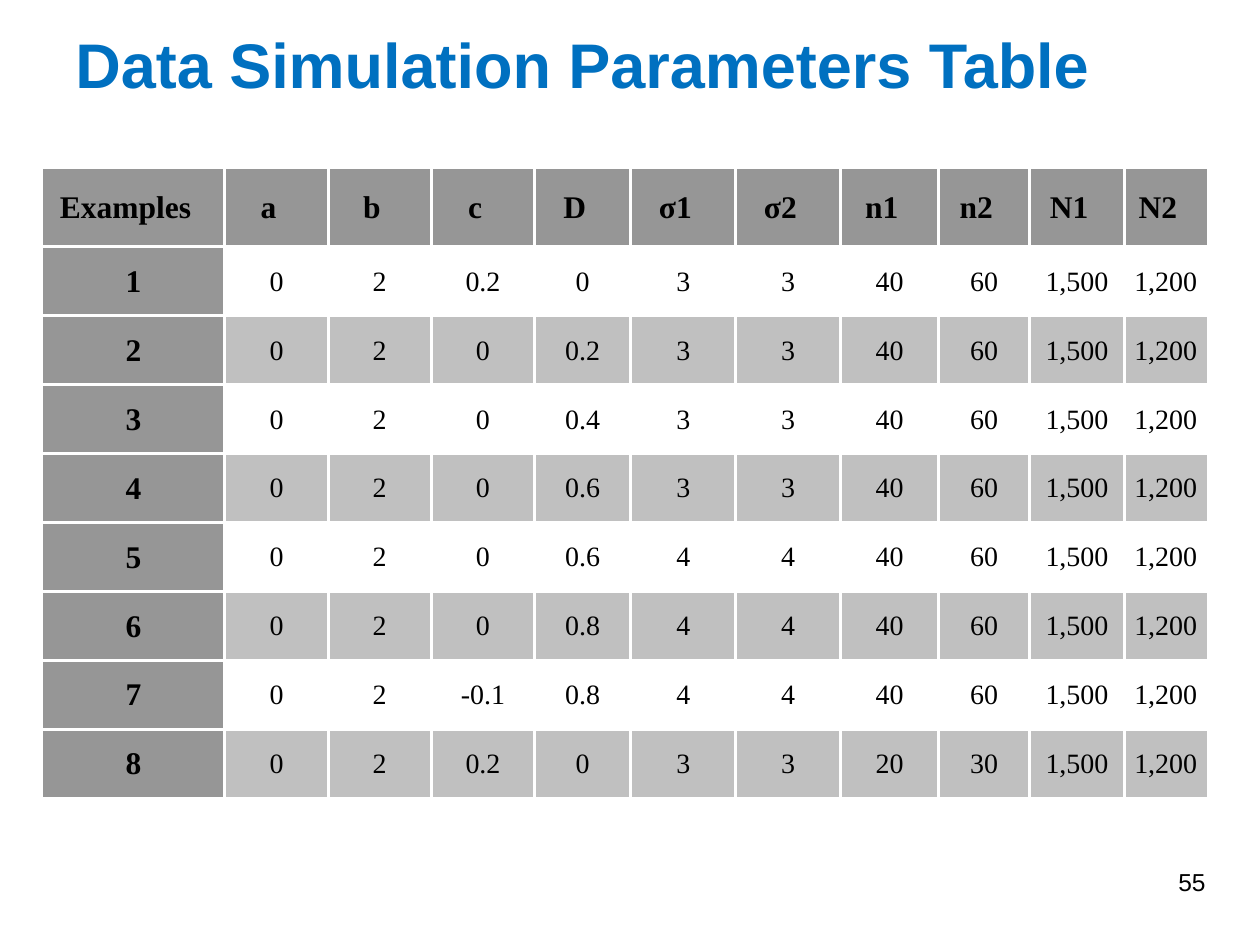
import pptx
import pptx.dml.color
import pptx.enum.text
import pptx.util
from pptx.oxml.xmlchemy import OxmlElement

Pt = pptx.util.Pt
ALIGN = pptx.enum.text.PP_ALIGN
MIDDLE = pptx.enum.text.MSO_ANCHOR.MIDDLE
COLORS = {"title": "0070C0", "text": "000000", "header": "969696",
          "band": "C0C0C0", "white": "FFFFFF"}


def write(paragraph, text, size, font, color="text", bold=False, align=ALIGN.LEFT):
    paragraph.text = text
    paragraph.alignment = align
    span = paragraph.runs[0].font
    span.size, span.name, span.bold = Pt(size), font, bold
    span.color.rgb = pptx.dml.color.RGBColor.from_string(COLORS[color])


def add_border(cell, side):
    """Draw a white line on one side (L, R, T or B); call before filling the cell."""
    line = OxmlElement(f"a:ln{side}")
    line.set("w", str(Pt(2)))
    fill = OxmlElement("a:solidFill")
    color = OxmlElement("a:srgbClr")
    color.set("val", COLORS["white"])
    fill.append(color)
    line.append(fill)
    cell._tc.get_or_add_tcPr().append(line)


deck = pptx.Presentation()
deck.slide_width, deck.slide_height = Pt(720), Pt(540)
page = deck.slides.add_slide(deck.slide_layouts[6])

title = page.shapes.add_textbox(Pt(36), Pt(24), Pt(612), Pt(24)).text_frame
title.word_wrap = True
title.vertical_anchor = MIDDLE
write(title.paragraphs[0], "Data Simulation Parameters Table", 36, "Arial", "title", True)

number = page.shapes.add_textbox(Pt(546), Pt(492), Pt(150), Pt(36)).text_frame
number.word_wrap = True
write(number.paragraphs[0], "55", 14, "Arial", align=ALIGN.RIGHT)

headings = ["Examples", "a", "b", "c", "D", "σ1", "σ2", "n1", "n2", "N1", "N2"]
# c, D, sigma (both groups), n1, n2 for each example
settings = [
    ("0.2", "0", "3", "40", "60"),
    ("0", "0.2", "3", "40", "60"),
    ("0", "0.4", "3", "40", "60"),
    ("0", "0.6", "3", "40", "60"),
    ("0", "0.6", "4", "40", "60"),
    ("0", "0.8", "4", "40", "60"),
    ("-0.1", "0.8", "4", "40", "60"),
    ("0.2", "0", "3", "20", "30"),
]
rows = [headings]
for example, (c, d, sigma, n1, n2) in enumerate(settings, 1):
    rows.append([str(example), "0", "2", c, d, sigma, sigma, n1, n2, "1,500", "1,200"])

widths = [104.5, 59, 59, 59, 55, 60, 60, 56, 52, 54, 47.5]
heights = [45] + [39.38] * len(settings)
last_row, last_column = len(rows) - 1, len(headings) - 1

table = page.shapes.add_table(len(rows), len(headings), Pt(24), Pt(96),
                              Pt(sum(widths)), Pt(sum(heights))).table
table.first_row = table.horz_banding = False
for column, width in zip(table.columns, widths):
    column.width = Pt(width)

for r, values in enumerate(rows):
    table.rows[r].height = Pt(heights[r])
    for c, value in enumerate(values):
        cell = table.cell(r, c)
        is_heading = r == 0 or c == 0
        cell.vertical_anchor = MIDDLE
        cell.margin_left = cell.margin_top = Pt(0.75)
        cell.margin_right = Pt(9.75 if r == 0 else 0.75)
        cell.margin_bottom = Pt(0)
        inner_sides = {"L": c > 0, "R": c < last_column, "T": r > 0, "B": r < last_row}
        for side, is_inner in inner_sides.items():
            if is_inner:
                add_border(cell, side)
        shade = "header" if is_heading else "white" if r % 2 else "band"
        cell.fill.solid()
        cell.fill.fore_color.rgb = pptx.dml.color.RGBColor.from_string(COLORS[shade])
        write(cell.text_frame.paragraphs[0], value, 18 if is_heading else 16,
              "Times New Roman", bold=is_heading, align=ALIGN.CENTER)

deck.save("out.pptx")
